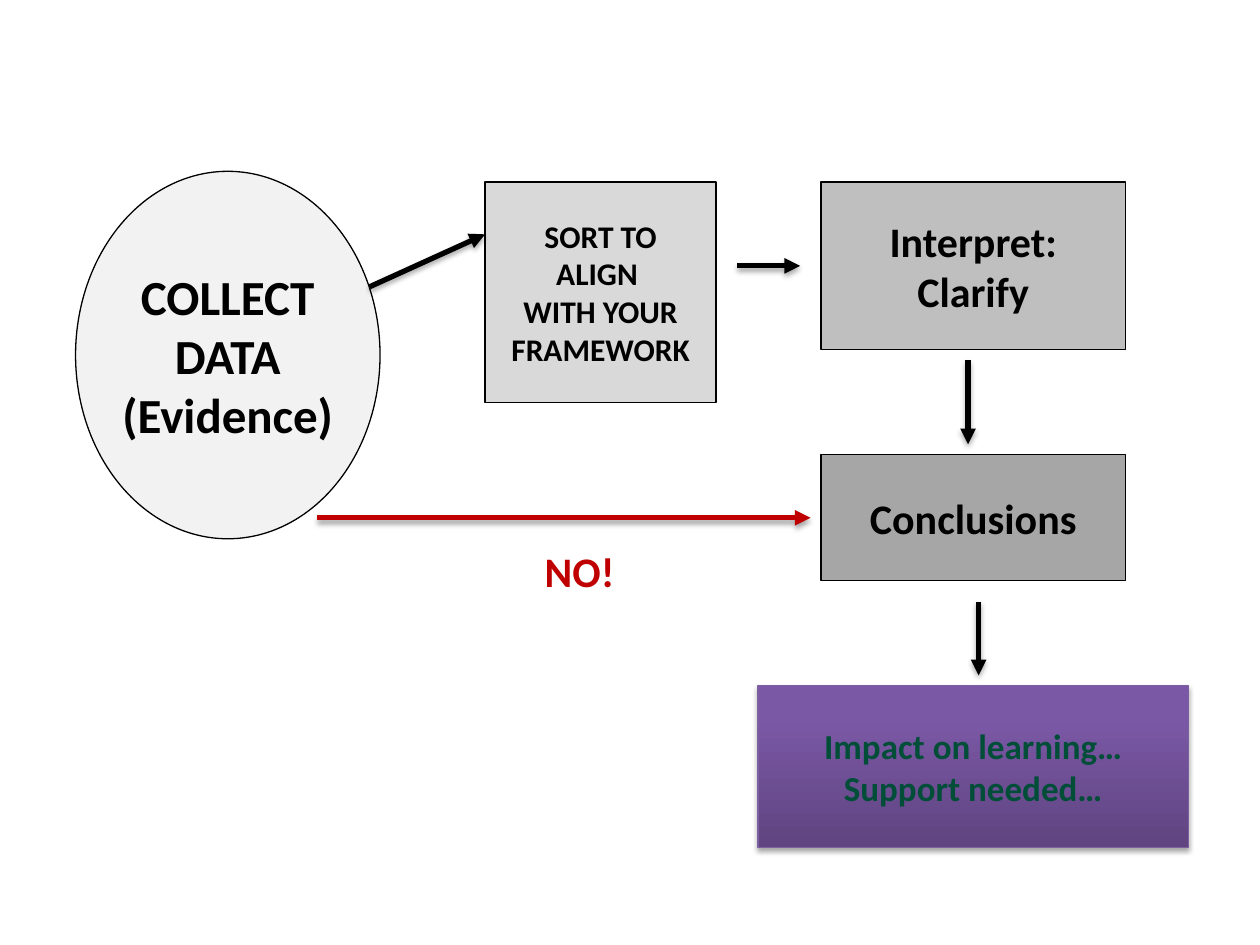
from pptx import Presentation
from pptx.dml.color import RGBColor
from pptx.enum.shapes import MSO_CONNECTOR, MSO_SHAPE
from pptx.enum.text import MSO_ANCHOR, MSO_AUTO_SIZE, PP_ALIGN
from pptx.oxml import parse_xml
from pptx.oxml.ns import nsdecls, qn
from pptx.util import Inches, Pt

OVAL, RECT = MSO_SHAPE.OVAL, MSO_SHAPE.RECTANGLE
STRAIGHT = MSO_CONNECTOR.STRAIGHT
CENTER, MIDDLE, TOP = PP_ALIGN.CENTER, MSO_ANCHOR.MIDDLE, MSO_ANCHOR.TOP
GROW = MSO_AUTO_SIZE.SHAPE_TO_FIT_TEXT

LEFT, UP = 0.6, 1.36  # where the grid starts, in inches
UNIT = 1 / 12
BLACK, RED, GREEN = "000000", "C00000", "004D38"

# kind, (column, row, columns, rows), fill, text, size
STEPS = [
    (OVAL, (0, 0, 29, 35), "F2F2F2", "COLLECT\vDATA\n(Evidence)", 28),
    (RECT, (39, 1, 22, 21), "D9D9D9",
     "SORT TO\nALIGN \nWITH YOUR\nFRAMEWORK", 18),
    (RECT, (71, 1, 29, 16), "BFBFBF", "Interpret:\nClarify", 24),
    (RECT, (71, 27, 29, 12), "A6A6A6", "Conclusions", 24),
]
# start, end, colour
ARROWS = [
    ((28, 11), (39, 6), BLACK),
    ((63, 9), (69, 9), BLACK),
    ((85, 18), (85, 26), BLACK),
    ((86, 41), (86, 48), BLACK),
    ((23, 33), (70, 33), RED),
]


def rgb(code):
    return RGBColor.from_string(code)


def col(n):
    return Inches(LEFT + n * UNIT)


def row(n):
    return Inches(UP + n * UNIT)


def span(n):
    return Inches(n * UNIT)


def write(shape, text, size, color):
    frame = shape.text_frame
    frame.text = text
    frame.word_wrap = False
    frame.vertical_anchor = MIDDLE
    for para in frame.paragraphs:
        para.alignment = CENTER
        for run in para.runs:
            font = run.font
            font.name, font.size, font.bold = "Calibri", Pt(size), True
            font.color.rgb = rgb(color)


def add_box(slide, kind, cell, fill, text, size, color=BLACK, edge=BLACK):
    x, y, w, h = cell
    box = slide.shapes.add_shape(kind, col(x), row(y), span(w), span(h))
    box.shadow.inherit = False
    box.fill.solid()
    box.fill.fore_color.rgb = rgb(fill)
    if edge:
        box.line.color.rgb = rgb(edge)
        box.line.width = Pt(0.75)
    else:
        box.line.fill.background()
    write(box, text, size, color)
    return box


def cast(shape):
    """Give the shape a soft shadow that falls straight down."""
    props = shape._element.spPr
    old = props.find(qn("a:effectLst"))
    if old is not None:
        props.remove(old)
    props.append(parse_xml(
        f'<a:effectLst {nsdecls("a")}><a:outerShdw blurRad="{Pt(3.1)}" '
        f'dist="{Pt(1.8)}" dir="5400000" rotWithShape="0">'
        '<a:srgbClr val="000000"><a:alpha val="35000"/></a:srgbClr>'
        '</a:outerShdw></a:effectLst>'))


def blend(shape, stops):
    """Replace the solid fill by a gradient that runs from bottom to top."""
    marks = "".join(f'<a:gs pos="{pos * 1000}"><a:srgbClr val="{code}"/></a:gs>'
                    for pos, code in stops)
    props = shape._element.spPr
    props.replace(props.find(qn("a:solidFill")), parse_xml(
        f'<a:gradFill {nsdecls("a")} rotWithShape="1"><a:gsLst>{marks}</a:gsLst>'
        '<a:lin ang="16200000" scaled="0"/></a:gradFill>'))


def add_arrow(slide, start, end, color):
    arrow = slide.shapes.add_connector(
        STRAIGHT, col(start[0]), row(start[1]), col(end[0]), row(end[1]))
    arrow.line.color.rgb = rgb(color)
    arrow.line.width = Pt(3)
    arrow.line._get_or_add_ln().append(
        parse_xml(f'<a:tailEnd {nsdecls("a")} type="triangle"/>'))
    cast(arrow)


def main():
    deck = Presentation()
    deck.slide_width, deck.slide_height = Inches(10), Inches(7.5)
    slide = deck.slides.add_slide(deck.slide_layouts[6])

    for step in STEPS:
        add_box(slide, *step)
    impact = add_box(slide, RECT, (65, 49, 41, 15.4), "7C57A8",
                     "Impact on learning…\nSupport needed…", 20,
                     GREEN, "7D60A0")
    blend(impact, [(0, "5F4480"), (80, "7B58A6"), (100, "7C57A8")])
    cast(impact)

    for arrow in ARROWS:
        add_arrow(slide, *arrow)

    label = add_box(slide, RECT, (41, 35, 14, 6.1), "FFFFFF", "NO!", 24,
                    RED, None)
    label.text_frame.word_wrap = True
    label.text_frame.vertical_anchor = TOP
    label.text_frame.auto_size = GROW

    deck.save("out.pptx")


if __name__ == "__main__":
    main()
